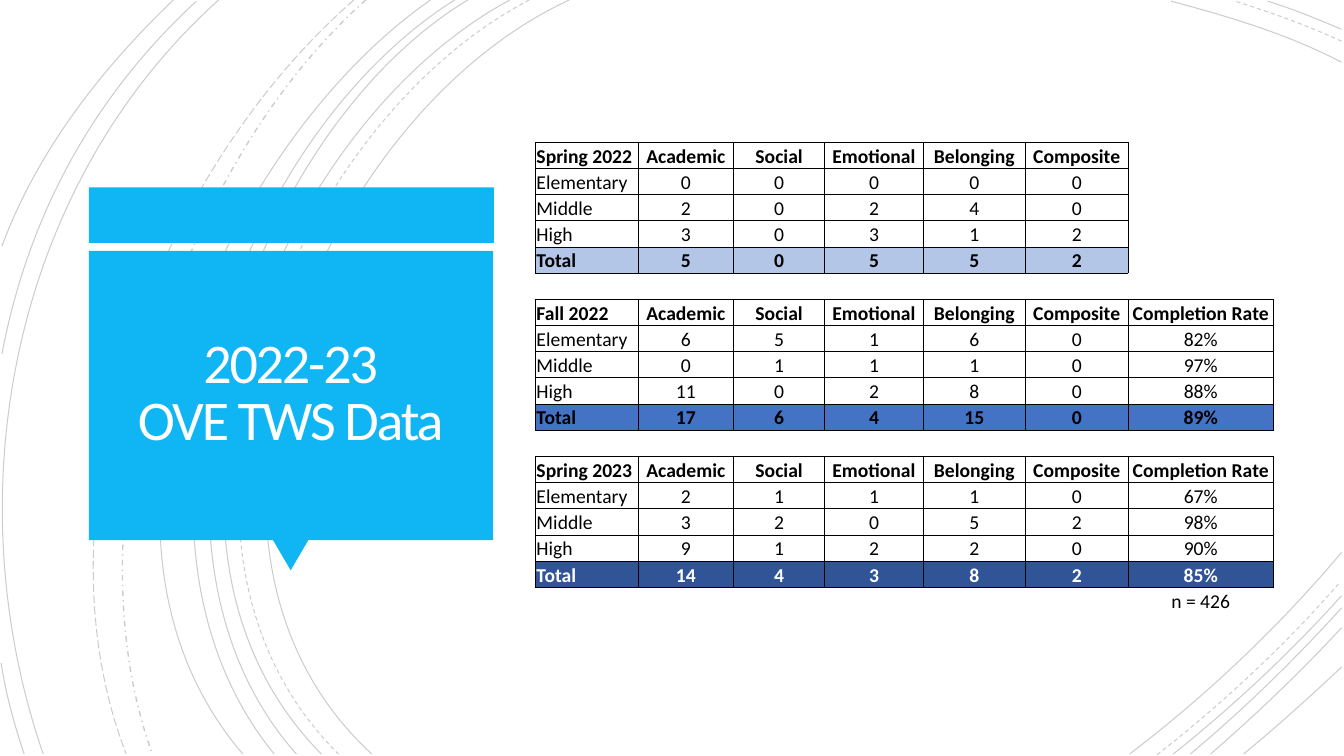
from lxml.etree import SubElement
from pptx import Presentation
from pptx.dml.color import RGBColor
from pptx.enum.dml import MSO_LINE
from pptx.enum.shapes import MSO_SHAPE
from pptx.enum.text import MSO_ANCHOR, MSO_AUTO_SIZE, PP_ALIGN
from pptx.oxml.ns import qn
from pptx.util import Cm, Pt


def rgb(hex_color):
    return RGBColor.from_string(hex_color)


def assign(target, values):
    for key, value in values.items():
        setattr(target, key, value)


deck = Presentation()
assign(deck, {"slide_width": Cm(33.87), "slide_height": Cm(19.05)})
slide = deck.slides.add_slide(deck.slide_layouts[5])

solid, dash = MSO_LINE.SOLID, MSO_LINE.DASH
arcs = [
    (solid, 0.75, (14.35, 0), (8, 2.92), (3.63, 13.72), (9.37, 19)),
    (solid, 0.75, (33.81, 1.57), (32.46, 0.86), (30.94, 0.41), (29.51, 0.03)),
    (solid, 0.75, (28.47, 19), (30.4, 17.53), (32.23, 15.8), (33.81, 13.92)),
    (dash, 0.75, (13.34, 0), (7.24, 3.18), (3.12, 13.64), (8.53, 19)),
    (dash, 0.75, (33.81, 1.04), (32.94, 0.64), (32, 0.3), (31.12, 0.03)),
    (dash, 0.75, (29.16, 19.02), (30.81, 17.73), (32.39, 16.26), (33.78, 14.66)),
    (solid, 0.75, (12.85, 0), (6.86, 3.23), (2.79, 13.64), (8.1, 19)),
    (solid, 0.75, (33.81, 0.74), (33.2, 0.48), (32.59, 0.23), (31.95, 0.03)),
    (solid, 0.75, (29.57, 19), (31.06, 17.81), (32.51, 16.46), (33.81, 15.01)),
    (solid, 0.75, (11.79, 0), (6.2, 3.38), (2.79, 13.74), (7.47, 19)),
    (solid, 0.75, (30, 19), (31.34, 17.88), (32.61, 16.64), (33.81, 15.32)),
    (solid, 0.75, (11.46, 0), (5.87, 3.51), (2.46, 13.54), (6.91, 19)),
    (solid, 0.75, (30.51, 19), (31.65, 18.01), (32.77, 16.94), (33.81, 15.82)),
    (solid, 0.75, (10.85, 0), (5.51, 3.73), (1.35, 13.44), (6.12, 19)),
    (solid, 0.75, (31.34, 19), (32.18, 18.31), (32.99, 17.58), (33.81, 16.81)),
    (MSO_LINE.DASH_DOT, 1, (9.22, 0), (4.47, 4.22), (1.65, 12.93), (3.84, 19)),
    (MSO_LINE.LONG_DASH, 0.75, (8.92, 0), (3.99, 4.29), (0.74, 12.67), (3.18, 19)),
    (solid, 0.75, (5.51, 0), (0.28, 4.7), (-1.17, 12.45), (1.09, 19)),
    (solid, 0.75, (4.95, 0.03), (2.34, 2.44), (0.71, 5.44), (0.05, 8.92)),
    (solid, 0.75, (0.03, 16.71), (0.15, 17.5), (0.36, 18.26), (0.61, 19)),
    (solid, 0.75, (4.37, 0), (2.54, 1.75), (0.94, 3.81), (0.05, 6.2)),
]
backdrop = slide.shapes.add_group_shape()
for style, weight, *points in arcs:
    start, *bends = [(Cm(x), Cm(y)) for x, y in points]
    builder = backdrop.shapes.build_freeform(*start)
    builder.add_line_segments(bends, close=False)
    arc = builder.convert_to_shape()
    outline = arc._element.spPr.find(".//" + qn("a:path"))
    curve = SubElement(outline, qn("a:cubicBezTo"))
    for segment in outline.findall(qn("a:lnTo")):
        curve.append(segment[0])
        outline.remove(segment)
    arc.shadow.inherit = False
    arc.fill.background()
    arc.line.color.rgb = rgb("000000")
    assign(arc.line, {"width": Pt(weight), "dash_style": style})
    ink = arc._element.spPr.find(".//" + qn("a:srgbClr"))
    SubElement(ink, qn("a:alpha")).set("val", "20000")

callout = slide.shapes.add_group_shape()
for kind, left, top, width, height, turn in [
    (MSO_SHAPE.RECTANGLE, 2.24, 4.72, 10.21, 1.4, 0),
    (MSO_SHAPE.ISOSCELES_TRIANGLE, 6.88, 13.61, 0.89, 0.76, 180),
    (MSO_SHAPE.RECTANGLE, 2.24, 6.32, 10.19, 7.29, 0),
]:
    panel = callout.shapes.add_shape(kind, Cm(left), Cm(top), Cm(width), Cm(height))
    panel.rotation = turn
    panel.shadow.inherit = False
    panel.fill.solid()
    panel.fill.fore_color.rgb = rgb("10B6F4")
    panel.line.fill.background()

title = slide.shapes.title
slide.shapes._spTree.append(title._element)
assign(title, {"left": Cm(2.46), "top": Cm(6.53), "width": Cm(9.73), "height": Cm(6.83)})
assign(title.text_frame, {
    "word_wrap": True, "auto_size": MSO_AUTO_SIZE.NONE, "vertical_anchor": MSO_ANCHOR.MIDDLE,
    "margin_left": Cm(0.64), "margin_right": Cm(0.64),
    "margin_top": Cm(0.64), "margin_bottom": Cm(0.64),
})
heading = title.text_frame.paragraphs[0]
assign(heading, {"alignment": PP_ALIGN.CENTER, "line_spacing": 0.85})
for index, words in enumerate(["2022-23", "OVE TWS Data"]):
    if index:
        heading.add_line_break()
    run = heading.add_run()
    run.text = words
    assign(run.font, {"size": Pt(40), "name": "Calibri"})
    run.font.color.rgb = rgb("FFFEFF")
    run._r.get_or_add_rPr().set("spc", "-150")

measures = ["Academic", "Social", "Emotional", "Belonging", "Composite", "Completion Rate"]
levels = ["Elementary", "Middle", "High", "Total"]
surveys = [
    ("Spring 2022", "B4C6E7", "000000", ["0 0 0 0 0", "2 0 2 4 0", "3 0 3 1 2", "5 0 5 5 2"]),
    ("Fall 2022", "4472C4", "000000",
     ["6 5 1 6 0 82%", "0 1 1 1 0 97%", "11 0 2 8 0 88%", "17 6 4 15 0 89%"]),
    ("Spring 2023", "305496", "FFFFFF",
     ["2 1 1 1 0 67%", "3 2 0 5 2 98%", "9 1 2 2 0 90%", "14 4 3 8 2 85%"]),
]
entries = {}
for number, (term, total_fill, total_ink, counts) in enumerate(surveys):
    scores = [line.split() for line in counts]
    lines = [[term] + measures[:len(scores[0])]]
    lines += [[level] + score for level, score in zip(levels, scores)]
    for offset, line in enumerate(lines):
        is_total = offset == len(levels)
        for column, words in enumerate(line):
            entries[number * 6 + offset, column] = (
                words, offset == 0 or is_total,
                total_ink if is_total else "000000", total_fill if is_total else None)
framed = set(entries)
entries[17, 6] = ("n = 426", False, "000000", None)

column_widths = [2.59, 2.41, 2.29, 2.49, 2.57, 2.59, 3.66]
frame = slide.shapes.add_table(18, 7, Cm(13.49), Cm(3.58), Cm(sum(column_widths)), Cm(18 * 0.66))
results = frame.table
assign(results, {"first_row": False, "horz_banding": False})
results._tbl.tblPr.find(qn("a:tableStyleId")).text = "{2D5ABB26-0587-4C30-8999-92F81FD0307C}"
for column, width in zip(results.columns, column_widths):
    column.width = Cm(width)
for row in results.rows:
    row.height = Cm(0.66)

edges = [("a:lnL", 0, -1), ("a:lnR", 0, 1), ("a:lnT", -1, 0), ("a:lnB", 1, 0)]
for row in range(18):
    for column in range(7):
        cell = results.cell(row, column)
        assign(cell, {
            "margin_left": Cm(0.03), "margin_right": Cm(0.03), "margin_top": Cm(0.03),
            "margin_bottom": Cm(0), "vertical_anchor": MSO_ANCHOR.BOTTOM,
        })
        for tag, down, across in edges:
            if framed & {(row, column), (row + down, column + across)}:
                border = SubElement(cell._tc.get_or_add_tcPr(), qn(tag), w="6350")
                paint = SubElement(border, qn("a:solidFill"))
                SubElement(paint, qn("a:srgbClr"), val="000000")
        words, bold, ink, fill = entries.get((row, column), ("", False, "000000", None))
        if fill:
            cell.fill.solid()
            cell.fill.fore_color.rgb = rgb(fill)
        else:
            cell.fill.background()
        paragraph = cell.text_frame.paragraphs[0]
        paragraph.alignment = PP_ALIGN.CENTER if column else PP_ALIGN.LEFT
        if words:
            run = paragraph.add_run()
            run.text = words
            assign(run.font, {"size": Pt(14), "name": "Calibri", "bold": bold})
            run.font.color.rgb = rgb(ink)
        else:
            SubElement(paragraph._p, qn("a:endParaRPr"), sz="1400")

deck.save("out.pptx")
